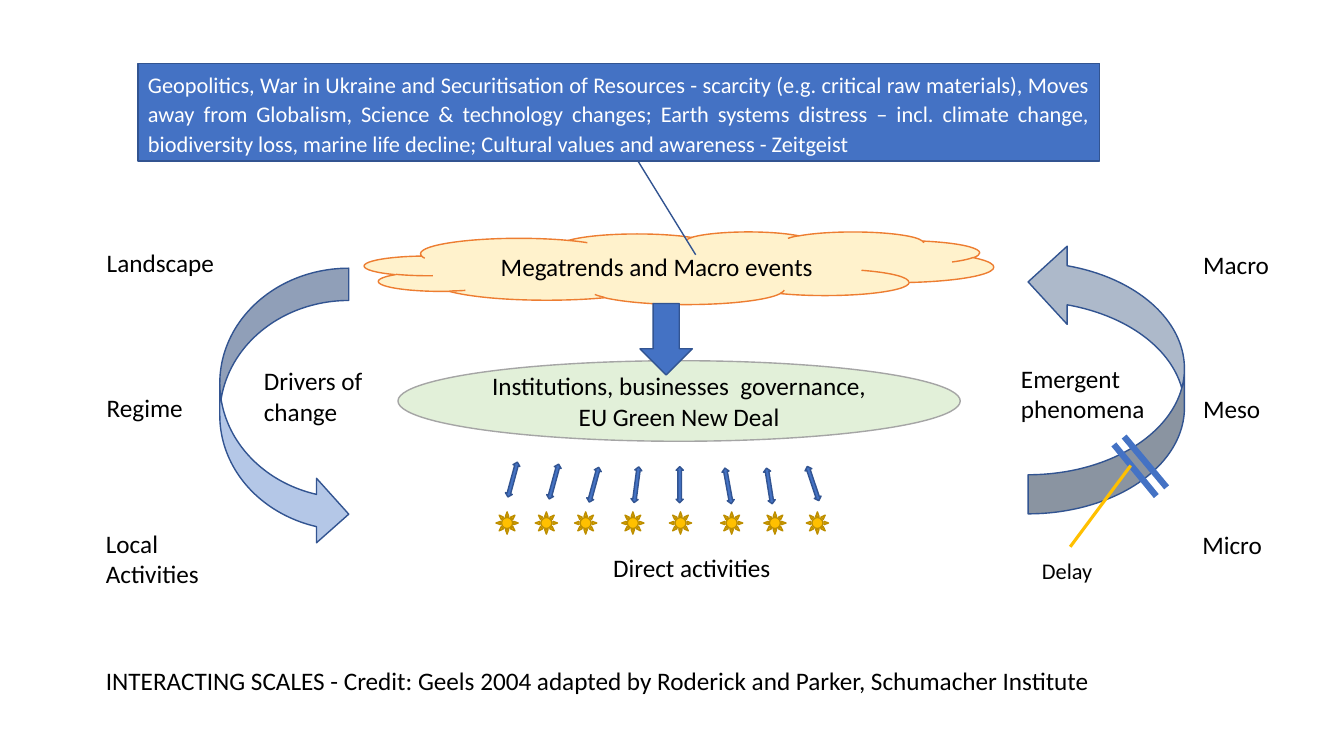
from lxml import etree
from pptx import Presentation
from pptx import util as u
from pptx.dml.color import RGBColor
from pptx.enum import shapes, text
from pptx.oxml.ns import qn

KIND = shapes.MSO_SHAPE
ALIGN = text.PP_ALIGN
FONT = "Calibri"
BLACK, WHITE, BLUE, NAVY = "000000", "FFFFFF", "4472C4", "325491"
GOLD, BRONZE = "FFC000", "BD8E00"

# All lengths in centimetres: left, top, width, height
MEGATRENDS = ("Megatrends and Macro events", (9.19, 5.84, 15.85, 1.83))
INSTITUTIONS = ("Institutions, businesses  governance, EU Green New Deal",
                (10.03, 9.09, 14.17, 2.03))
DOWN_ARROW = (16.13, 7.65, 1.32, 1.8)
EMERGENCE_ARROW = (25.91, 6.12, 3.94, 6.83)
DRIVERS_ARROW = (5.54, 6.76, 3.25, 7.01)

SUN_TOP, SUN_SIZE = 12.9, 0.56
SUN_LEFTS = [12.5, 13.49, 14.48, 15.67, 16.87, 18.16, 19.25, 20.32]

EXCHANGE_SIZE = (0.18, 0.91)
EXCHANGES = [  # left, top, rotation
    (12.83, 11.63, 15.2), (13.87, 11.68, 15.2), (14.88, 11.76, 15.2),
    (15.95, 11.76, 7.5), (17.04, 11.76, 0), (18.26, 11.79, -10.3),
    (19.3, 11.79, -9.1), (20.4, 11.73, -18.6),
]

LABELS = [
    ("Direct activities", (13.03, 13.79, 8.81, 1.03), ALIGN.CENTER),
    ("Landscape", (2.44, 6.12, 3.58, 1.03), ALIGN.LEFT),
    ("Regime", (2.44, 9.75, 3.58, 1.03), ALIGN.LEFT),
    ("Local Activities", (2.42, 13.19, 3.58, 1.8), ALIGN.LEFT),
    ("Macro", (30.07, 6.16, 3.58, 1.03), ALIGN.LEFT),
    ("Meso", (30.07, 9.79, 3.58, 1.03), ALIGN.LEFT),
    ("Micro", (30.05, 13.22, 3.58, 1.03), ALIGN.LEFT),
    ("Emergent phenomena", (25.48, 9.02, 3.94, 1.8), ALIGN.LEFT),
    ("Drivers of change", (6.4, 9.09, 3.12, 1.8), ALIGN.LEFT),
    ("INTERACTING SCALES - Credit: Geels 2004 adapted by Roderick and Parker, "
     "Schumacher Institute", (2.42, 16.64, 29.46, 1.03), ALIGN.LEFT),
]

DELAY_BARS = [(28.07, 11.2, 29.14, 12.5), (28.33, 11.0, 29.4, 12.28)]
DELAY = ("Delay", (25.93, 13.79, 1.93, 1.17), (-0.01, 0.54, -1.76, 1.33))
PRESSURES = (
    "Geopolitics, War in Ukraine and Securitisation of Resources - scarcity "
    "(e.g. critical raw materials), Moves away from Globalism, Science & "
    "technology changes; Earth systems distress – incl. climate change, "
    "biodiversity loss, marine life decline; Cultural values and awareness "
    "- Zeitgeist",
    (3.48, 1.6, 24.23, 2.46), (1, 0.52, 1.96, 0.58))


def rgb(value):
    return RGBColor.from_string(value)


def write(shape, content, size=18, color=BLACK, align=ALIGN.CENTER, spacing=None):
    frame = shape.text_frame
    frame.word_wrap = True
    paragraph = frame.paragraphs[0]
    paragraph.alignment = align
    paragraph.line_spacing = spacing
    run = paragraph.add_run()
    run.text = content
    run.font.name = FONT
    run.font.size = u.Pt(size)
    run.font.color.rgb = rgb(color)


def add_shape(slide, kind, box, fill, line, width=1, adjustments=()):
    shape = slide.shapes.add_shape(kind, *map(u.Cm, box))
    shape.shadow.inherit = False
    shape.fill.solid()
    shape.fill.fore_color.rgb = rgb(fill)
    shape.line.color.rgb = rgb(line)
    shape.line.width = u.Pt(width)
    for index, value in enumerate(adjustments):
        shape.adjustments[index] = value
    return shape


def add_label(slide, content, box, align):
    label = slide.shapes.add_textbox(*map(u.Cm, box))
    write(label, content, align=align)
    label.text_frame.auto_size = text.MSO_AUTO_SIZE.SHAPE_TO_FIT_TEXT


def add_bar(slide, ends):
    bar = slide.shapes.add_connector(shapes.MSO_CONNECTOR.STRAIGHT, *map(u.Cm, ends))
    bar.line.color.rgb = rgb(BLUE)
    bar.line.width = u.Pt(4.5)
    etree.SubElement(bar.element.spPr, qn("a:effectLst"))


def main():
    presentation = Presentation()
    presentation.slide_width, presentation.slide_height = u.Cm(33.87), u.Cm(19.05)
    slide = presentation.slides.add_slide(presentation.slide_layouts[6])

    content, box = MEGATRENDS
    write(add_shape(slide, KIND.CLOUD, box, "FFF2CC", "ED7D31"), content)
    content, box = INSTITUTIONS
    write(add_shape(slide, KIND.OVAL, box, "E2F0D9", "A5A5A5"), content)

    for left in SUN_LEFTS:
        add_shape(slide, KIND.SUN, (left, SUN_TOP, SUN_SIZE, SUN_SIZE), GOLD, BRONZE)

    add_shape(slide, KIND.DOWN_ARROW, DOWN_ARROW, BLUE, NAVY)
    emergence = add_shape(slide, KIND.CURVED_LEFT_ARROW, EMERGENCE_ARROW, "ADB9CA", NAVY)
    emergence.element.spPr.find(qn("a:xfrm")).set("flipV", "1")
    add_shape(slide, KIND.CURVED_RIGHT_ARROW, DRIVERS_ARROW, "B4C7E7", NAVY)

    for left, top, rotation in EXCHANGES:
        exchange = add_shape(slide, KIND.UP_DOWN_ARROW, (left, top, *EXCHANGE_SIZE),
                             BLUE, NAVY)
        exchange.rotation = rotation

    for label in LABELS:
        add_label(slide, *label)
    for ends in DELAY_BARS:
        add_bar(slide, ends)

    content, box, pointer = DELAY
    delay = add_shape(slide, KIND.LINE_CALLOUT_1_NO_BORDER, box, WHITE, GOLD, 2.25, pointer)
    write(delay, content, size=16)
    content, box, pointer = PRESSURES
    pressures = add_shape(slide, KIND.LINE_CALLOUT_1, box, BLUE, NAVY, 1, pointer)
    write(pressures, content, 16, WHITE, ALIGN.JUSTIFY, 1.1)

    presentation.save("out.pptx")


if __name__ == "__main__":
    main()
